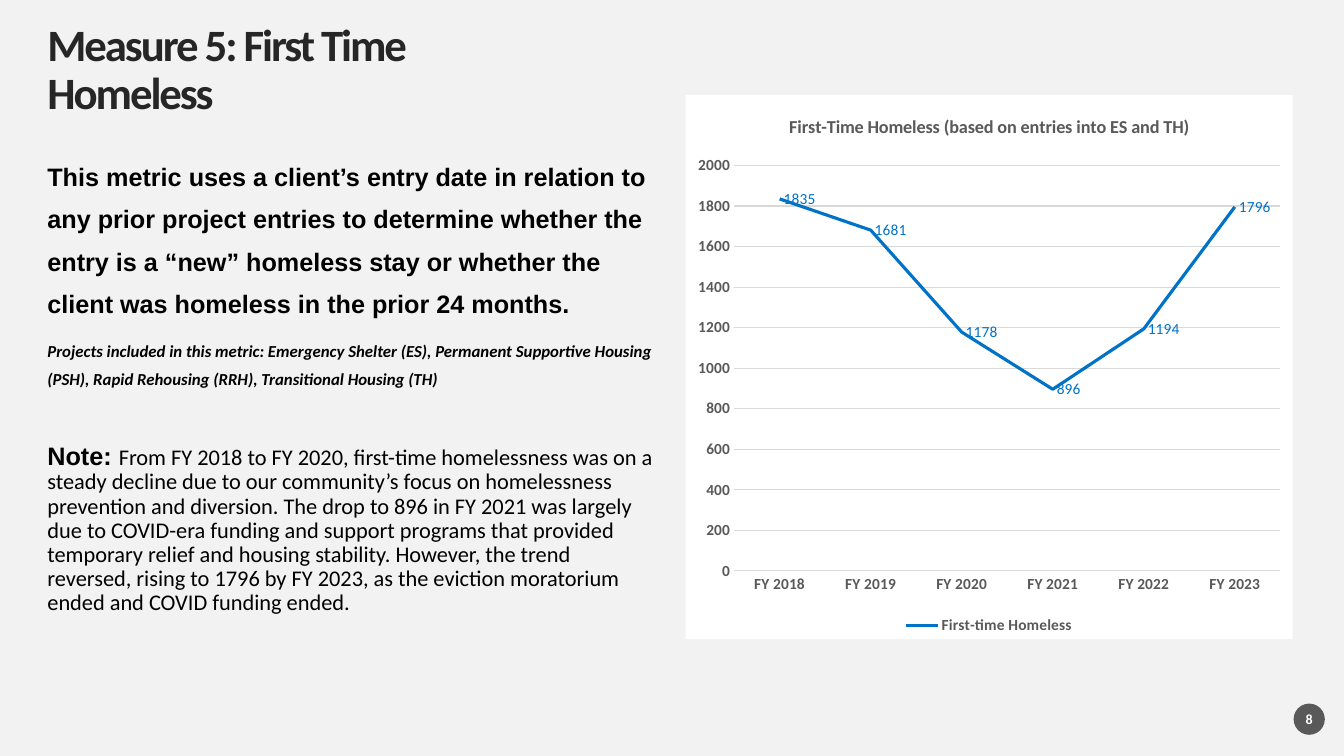
import pptx
import pptx.chart.data
import pptx.dml.color
import pptx.enum.chart
import pptx.enum.shapes
import pptx.enum.text
import pptx.oxml
import pptx.oxml.ns
import pptx.util
from pptx.util import Inches

COLORS = {
    "background": "F2F2F2",
    "heading": "262626",
    "text": "000000",
    "white": "FFFFFF",
    "badge": "595959",
    "axis": "595959",
    "grid": "D9D9D9",
    "trend": "0072C7",
}
METRIC = (
    "This metric uses a client’s entry date in relation to any prior project entries "
    "to determine whether the entry is a “new” homeless stay or whether the client "
    "was homeless in the prior 24 months."
)
PROJECTS = (
    "Projects included in this metric: Emergency Shelter (ES), Permanent Supportive "
    "Housing (PSH), Rapid Rehousing (RRH), Transitional Housing (TH)"
)
NOTE = (
    "From FY 2018 to FY 2020, first-time homelessness was on a steady decline due to our "
    "community’s focus on homelessness prevention and diversion. The drop to 896 in FY 2021 "
    "was largely due to COVID-era funding and support programs that provided temporary relief "
    "and housing stability. However, the trend reversed, rising to 1796 by FY 2023, as the "
    "eviction moratorium ended and COVID funding ended."
)
ENTRIES = {
    "FY 2018": 1835,
    "FY 2019": 1681,
    "FY 2020": 1178,
    "FY 2021": 896,
    "FY 2022": 1194,
    "FY 2023": 1796,
}


def rgb(name):
    """Return the palette colour with the given name."""
    return pptx.dml.color.RGBColor.from_string(COLORS[name])


def style(font, size, color, bold=False, italic=False, face="Calibri"):
    """Format a font."""
    font.name = face
    font.size = pptx.util.Pt(size)
    font.bold = bold
    font.italic = italic
    font.color.rgb = rgb(color)


def prepare_frame(frame, anchor):
    """Wrap a text frame without margins and anchor its text."""
    frame.word_wrap = True
    frame.auto_size = pptx.enum.text.MSO_AUTO_SIZE.NONE
    frame.vertical_anchor = anchor
    frame.margin_left = frame.margin_right = 0
    frame.margin_top = frame.margin_bottom = 0


def place_heading(slide, left, top, width, height):
    """Fill and move the title placeholder."""
    heading = slide.shapes.title
    heading.left, heading.top, heading.width, heading.height = left, top, width, height
    frame = heading.text_frame
    prepare_frame(frame, pptx.enum.text.MSO_ANCHOR.MIDDLE)
    frame.text = "Measure 5: First Time Homeless"
    paragraph = frame.paragraphs[0]
    paragraph.alignment = pptx.enum.text.PP_ALIGN.LEFT
    paragraph.line_spacing = 0.9
    run = paragraph.runs[0]
    style(run.font, 32, "heading", bold=True)
    run.font._element.set("spc", "-150")


def place_description(slide, left, top, width, height):
    """Write the metric, the projects it covers and the note."""
    frame = slide.shapes.add_textbox(left, top, width, height).text_frame
    prepare_frame(frame, pptx.enum.text.MSO_ANCHOR.TOP)
    emphasis = {"size": 18, "color": "text", "bold": True, "face": "Arial"}
    projects_style = {"size": 12, "color": "text", "bold": True, "italic": True}
    note_style = {"size": 16, "color": "text"}
    passages = [
        (1.4, 0, [(METRIC, emphasis)]),
        (1.4, 10, [(PROJECTS, projects_style)]),
        (0.9, 39, [("Note: ", emphasis), (NOTE, note_style)]),
    ]
    for index, (spacing, before, parts) in enumerate(passages):
        paragraph = frame.add_paragraph() if index else frame.paragraphs[0]
        paragraph.line_spacing = spacing
        paragraph.space_before = pptx.util.Pt(before)
        for text, look in parts:
            run = paragraph.add_run()
            run.text = text
            style(run.font, **look)


def format_axis(axis):
    """Give an axis its font and remove its tick marks."""
    axis.major_tick_mark = pptx.enum.chart.XL_TICK_MARK.NONE
    axis.minor_tick_mark = pptx.enum.chart.XL_TICK_MARK.NONE
    style(axis.tick_labels.font, 11, "axis", bold=True)


def set_plot_area(chart, x, y, w, h):
    """Fix the inner plot area as fractions of the chart."""
    plot_area = chart._chartSpace.chart.plotArea
    for old in plot_area.findall(pptx.oxml.ns.qn("c:layout")):
        plot_area.remove(old)
    sizes = "".join(f'<c:{key} val="{value}"/>' for key, value in zip("xywh", (x, y, w, h)))
    plot_area.insert(0, pptx.oxml.parse_xml(
        f'<c:layout {pptx.oxml.ns.nsdecls("c")}><c:manualLayout>'
        '<c:layoutTarget val="inner"/><c:xMode val="edge"/><c:yMode val="edge"/>'
        f'{sizes}</c:manualLayout></c:layout>'))


def place_trend_chart(slide, left, top, width, height):
    """Draw the line chart of first-time homelessness by year."""
    entries = pptx.chart.data.CategoryChartData()
    entries.categories = list(ENTRIES)
    entries.add_series("First-time Homeless", list(ENTRIES.values()))
    chart = slide.shapes.add_chart(
        pptx.enum.chart.XL_CHART_TYPE.LINE, left, top, width, height, entries).chart
    style(chart.font, 10, "text")
    chart._chartSpace.chart.addnext(pptx.oxml.parse_xml(
        f'<c:spPr {pptx.oxml.ns.nsdecls("c", "a")}><a:solidFill>'
        f'<a:srgbClr val="{COLORS["white"]}"/></a:solidFill>'
        '<a:ln><a:noFill/></a:ln></c:spPr>'))
    set_plot_area(chart, 0.08, 0.13, 0.9, 0.745)

    chart.has_title = True
    caption = chart.chart_title.text_frame
    caption.text = "First-Time Homeless (based on entries into ES and TH)"
    style(caption.paragraphs[0].runs[0].font, 13, "axis", bold=True)
    chart.chart_title.include_in_layout = False

    chart.has_legend = True
    chart.legend.position = pptx.enum.chart.XL_LEGEND_POSITION.BOTTOM
    chart.legend.include_in_layout = False
    style(chart.legend.font, 11, "axis", bold=True)

    years, counts = chart.category_axis, chart.value_axis
    format_axis(years)
    format_axis(counts)
    counts.minimum_scale, counts.maximum_scale, counts.major_unit = 0, 2000, 200
    counts.format.line.fill.background()
    for line in (years.format.line, counts.major_gridlines.format.line):
        line.color.rgb = rgb("grid")
        line.width = pptx.util.Pt(0.75)

    plot = chart.plots[0]
    plot.vary_by_categories = False
    trend = plot.series[0]
    trend.smooth = False
    trend.marker.style = pptx.enum.chart.XL_MARKER_STYLE.NONE
    trend.format.line.color.rgb = rgb("trend")
    trend.format.line.width = pptx.util.Pt(2.25)
    labels = trend.data_labels
    labels.show_value = True
    labels.position = pptx.enum.chart.XL_LABEL_POSITION.RIGHT
    style(labels.font, 11, "trend")


def place_page_badge(slide, left, top, width, height):
    """Draw the round page number."""
    badge = slide.shapes.add_shape(
        pptx.enum.shapes.MSO_SHAPE.OVAL, left, top, width, height)
    badge.shadow.inherit = False
    badge.fill.solid()
    badge.fill.fore_color.rgb = rgb("badge")
    badge.line.fill.background()
    frame = badge.text_frame
    prepare_frame(frame, pptx.enum.text.MSO_ANCHOR.MIDDLE)
    frame.text = "8"
    frame.paragraphs[0].alignment = pptx.enum.text.PP_ALIGN.CENTER
    style(frame.paragraphs[0].runs[0].font, 10, "white", bold=True)


def main():
    """Build and save the slide."""
    deck = pptx.Presentation()
    deck.slide_width, deck.slide_height = Inches(13.33), Inches(7.5)
    slide = deck.slides.add_slide(deck.slide_layouts[5])
    slide.background.fill.solid()
    slide.background.fill.fore_color.rgb = rgb("background")
    place_heading(slide, Inches(0.47), Inches(0.47), Inches(4.47), Inches(0.47))
    place_description(slide, Inches(0.47), Inches(1.48), Inches(6.02), Inches(5.29))
    place_trend_chart(slide, Inches(6.8), Inches(0.94), Inches(6.02), Inches(5.4))
    place_page_badge(slide, Inches(12.83), Inches(6.98), Inches(0.31), Inches(0.31))
    deck.save("out.pptx")


if __name__ == "__main__":
    main()
